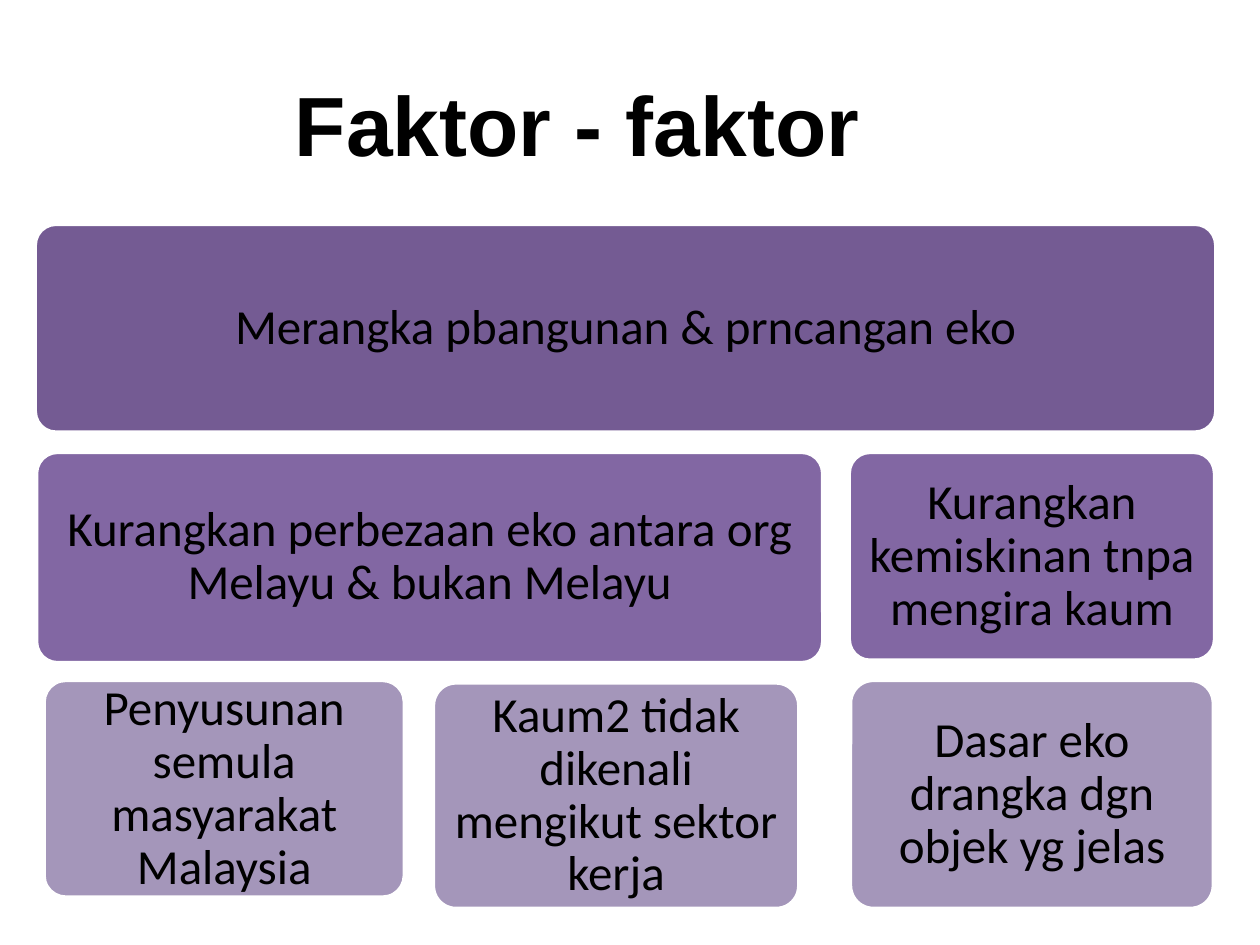
from pptx import Presentation
from pptx.dml.color import RGBColor
from pptx.enum.shapes import MSO_SHAPE as Shape
from pptx.enum.text import MSO_ANCHOR as Anchor, PP_ALIGN as Align
from pptx.util import Inches, Pt

DARK, MEDIUM, LIGHT = "745B93", "8267A3", "A496BA"
BLACK, WHITE = "000000", "FFFFFF"

# Fill, place (left, top, width, height) and wording of each factor
FACTORS = [
    (DARK, (0.28, 1.78, 9.37, 1.65), "Merangka pbangunan & prncangan eko"),
    (MEDIUM, (0.29, 3.59, 6.24, 1.67),
     "Kurangkan perbezaan eko antara org Melayu & bukan Melayu"),
    (LIGHT, (0.35, 5.4, 2.86, 1.72), "Penyusunan semula masyarakat Malaysia"),
    (LIGHT, (3.44, 5.42, 2.9, 1.79),
     "Kaum2 tidak dikenali mengikut sektor kerja"),
    (MEDIUM, (6.74, 3.59, 2.9, 1.65), "Kurangkan kemiskinan tnpa mengira kaum"),
    (LIGHT, (6.75, 5.4, 2.88, 1.81), "Dasar eko drangka dgn objek yg jelas"),
]


def color(value):
    return RGBColor.from_string(value)


class SlideBuilder:
    """Holds the text style and the current slide."""

    title_font, title_size = "Arial", 48
    body_font, body_size = "Calibri", 28
    # The rounded corners add about 0.05 in to this inset
    inset = Inches(0.07)

    def __init__(self, page):
        self.page = page

    def add_run(self, para, text, font, size, bold=False):
        run = para.add_run()
        run.text = text
        run.font.name = font
        run.font.size = Pt(size)
        run.font.bold = bold
        run.font.color.rgb = color(BLACK)

    def title(self, place, text):
        box = self.page.shapes.title
        box.left, box.top, box.width, box.height = map(Inches, place)
        box.text_frame.vertical_anchor = Anchor.MIDDLE
        para = box.text_frame.paragraphs[0]
        para.alignment = Align.LEFT
        self.add_run(para, text, self.title_font, self.title_size, bold=True)

    def card(self, fill, place, text):
        box = self.page.shapes.add_shape(
            Shape.ROUNDED_RECTANGLE, *map(Inches, place))
        box.adjustments[0] = 0.1
        box.shadow.inherit = False
        box.fill.solid()
        box.fill.fore_color.rgb = color(fill)
        box.line.color.rgb = color(WHITE)
        box.line.width = Pt(2)

        frame = box.text_frame
        frame.word_wrap = True
        frame.vertical_anchor = Anchor.MIDDLE
        frame.margin_left = frame.margin_right = self.inset
        frame.margin_top = frame.margin_bottom = self.inset
        para = frame.paragraphs[0]
        para.alignment = Align.CENTER
        para.line_spacing = 0.9
        self.add_run(para, text, self.body_font, self.body_size)


def main():
    deck = Presentation()
    deck.slide_width, deck.slide_height = Inches(10), Inches(7.5)
    title_only = deck.slide_layouts[5]
    builder = SlideBuilder(deck.slides.add_slide(title_only))

    # Heading
    builder.title((2.24, 0.52, 6.46, 0.91), "Faktor - faktor")

    # Factor cards
    for fill, place, text in FACTORS:
        builder.card(fill, place, text)

    deck.save("out.pptx")


if __name__ == "__main__":
    main()
